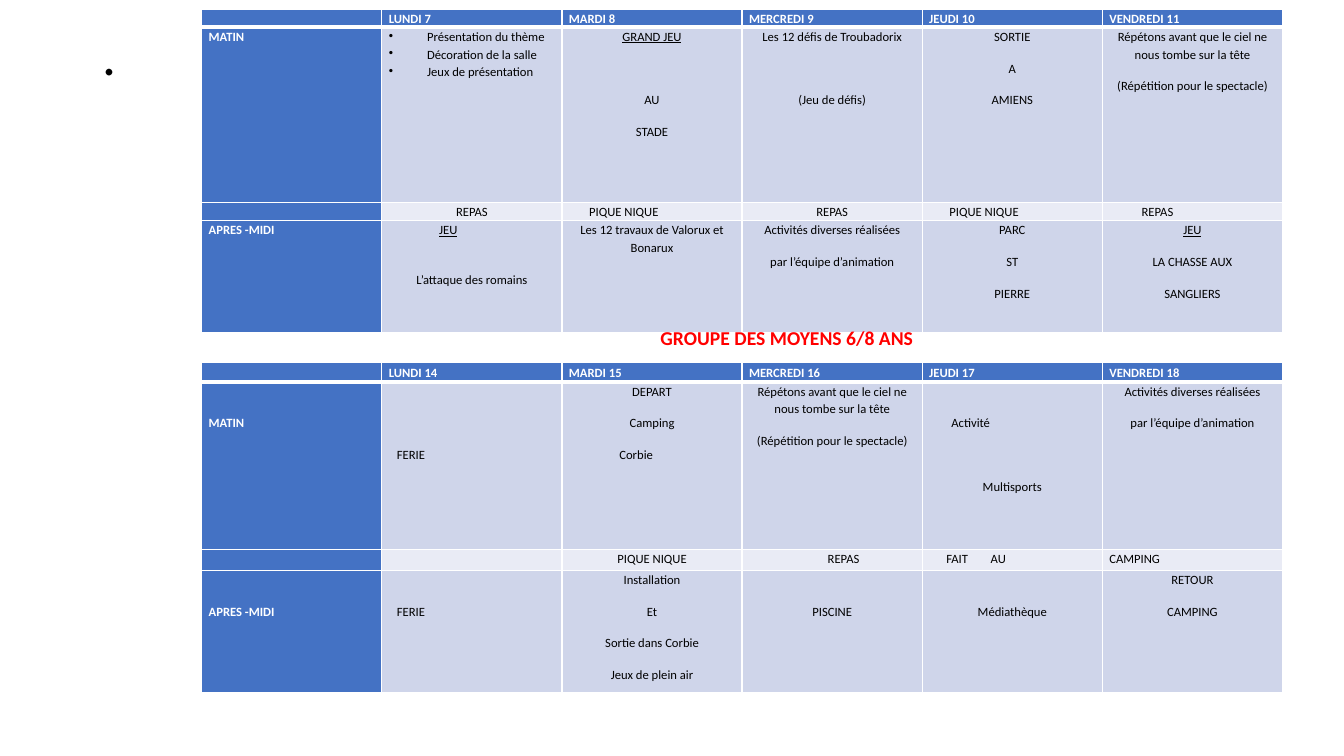
import pptx
import pptx.util
import pptx.dml.color
import pptx.enum.text
import pptx.oxml.ns
import lxml.etree

Inches = pptx.util.Inches
Pt = pptx.util.Pt
Align = pptx.enum.text.PP_ALIGN
Anchor = pptx.enum.text.MSO_ANCHOR
qn = pptx.oxml.ns.qn

theme = {
    "font": "Calibri", "white": "FFFFFF", "black": "000000", "red": "FF0000",
    "blue": "4472C4", "day": "CFD5EA", "meal": "E9EBF5",
    "cell": 9, "group": 14, "mark": 39.6, "after": 10, "skipped_line": 22.6,
}
left = {"align": Align.LEFT}
underlined = {"underline": True}
bullet = {"align": Align.LEFT, "indent": 0.38, "bullet": "•", "after": 0}


def write(frame, text, size=theme["cell"], color=theme["black"], bold=False,
          underline=False, align=Align.CENTER, spacing=1.15, after=theme["after"],
          skip=0, indent=0, bullet=None, tabs=()):
    para = frame.paragraphs[0]
    if para.runs:
        para = frame.add_paragraph()
        para.space_before = Pt(skip * theme["skipped_line"])
    para.alignment = align
    para.line_spacing = spacing
    para.space_after = Pt(after)
    properties = para._p.get_or_add_pPr()
    if indent:
        properties.set("marL", str(Inches(indent)))
    if bullet:
        properties.set("indent", str(-Inches(indent)))
        lxml.etree.SubElement(properties, qn("a:buChar"), char=bullet)
    if tabs:
        stops = lxml.etree.SubElement(properties, qn("a:tabLst"))
        for stop in tabs:
            lxml.etree.SubElement(stops, qn("a:tab"), pos=str(Inches(stop)), algn="l")
    if not text:
        lxml.etree.SubElement(para._p, qn("a:endParaRPr"), sz=str(size * 100))
        return
    span = para.add_run()
    span.text = text
    span.font.name = theme["font"]
    span.font.size = Pt(size)
    span.font.bold = bold
    span.font.underline = underline
    span.font.color.rgb = pptx.dml.color.RGBColor.from_string(color)


rehearsal = ["Répétons avant que le ciel ne nous tombe sur la tête",
             "(Répétition pour le spectacle)"]
varied = ["Activités diverses réalisées", "par l’équipe d’animation"]
picnic = [("PIQUE NIQUE", {**left, "indent": 0.2})]

weeks = [
    {
        "top": 0.09, "heights": [0.18, 1.74, 0.18, 1.11],
        "rows": [
            [[""], ["LUNDI 7"], ["MARDI 8"], ["MERCREDI 9"], ["JEUDI 10"], ["VENDREDI 11"]],
            [["MATIN"],
             [("Présentation du thème", bullet), ("Décoration de la salle", bullet),
              ("Jeux de présentation", bullet)],
             [("GRAND JEU", underlined), ("AU", {"skip": 1}), "STADE"],
             ["Les 12 défis de Troubadorix", ("(Jeu de défis)", {"skip": 1})],
             ["SORTIE", "A", "AMIENS"],
             rehearsal],
            [[""], ["REPAS"], picnic, ["REPAS"], picnic,
             [("REPAS", {**left, "indent": 0.32})]],
            [["APRES -MIDI"],
             [("JEU", {**left, **underlined, "indent": 0.5, "after": 0}),
              ("L’attaque des romains", {"skip": 1})],
             ["Les 12 travaux de Valorux et Bonarux"],
             varied,
             ["PARC", "ST", "PIERRE"],
             [("JEU", underlined), "LA CHASSE AUX", "SANGLIERS"]],
        ],
    },
    {
        "top": 3.6, "heights": [0.19, 1.66, 0.21, 1.21],
        "rows": [
            [[""], ["LUNDI 14"], ["MARDI 15"], ["MERCREDI 16"], ["JEUDI 17"], ["VENDREDI 18"]],
            [[("MATIN", {"skip": 1})],
             [("FERIE", {**left, "skip": 2, "indent": 0.08})],
             ["DEPART", "Camping", ("Corbie", {**left, "indent": 0.5})],
             rehearsal,
             [("Activité", {**left, "skip": 1, "indent": 0.22}),
              ("Multisports", {"skip": 1})],
             varied],
            [[""], [""], ["PIQUE NIQUE"],
             [("REPAS", {**left, "indent": 0.78})],
             [("\tFAIT\tAU", {**left, "tabs": (0.17, 0.61)})],
             [("CAMPING", left)]],
            [[("APRES -MIDI", {"skip": 1})],
             [("FERIE", {**left, "skip": 1, "indent": 0.08})],
             ["Installation", "Et", "Sortie dans Corbie", "Jeux de plein air"],
             [("PISCINE", {"skip": 1})],
             [("Médiathèque", {"skip": 1})],
             ["RETOUR", "CAMPING"]],
        ],
    },
]

deck = pptx.Presentation()
deck.slide_width = Inches(13.33)
deck.slide_height = Inches(7.5)
page = deck.slides.add_slide(deck.slide_layouts[6])

for week in weeks:
    table = page.shapes.add_table(4, 6, Inches(2), Inches(week["top"]), Inches(10.72),
                                  Inches(sum(week["heights"]))).table
    table.first_row = False
    table.horz_banding = False
    for column in table.columns:
        column.width = Inches(10.72 / 6)
    for row_index, row in enumerate(week["rows"]):
        table.rows[row_index].height = Inches(week["heights"][row_index])
        for column_index, entries in enumerate(row):
            cell = table.cell(row_index, column_index)
            heading = row_index == 0 or column_index == 0
            cell.margin_left = cell.margin_right = Inches(0.07)
            cell.margin_top = cell.margin_bottom = 0
            for side in ("L", "R", "T", "B"):
                thick = (row_index, side) in ((0, "B"), (1, "T"))
                border = lxml.etree.SubElement(cell._tc.get_or_add_tcPr(), qn("a:ln" + side),
                                               w=str(Pt(3 if thick else 1)))
                paint = lxml.etree.SubElement(border, qn("a:solidFill"))
                lxml.etree.SubElement(paint, qn("a:srgbClr"), val=theme["white"])
            fill = "blue" if heading else "meal" if row_index == 2 else "day"
            cell.fill.solid()
            cell.fill.fore_color.rgb = pptx.dml.color.RGBColor.from_string(theme[fill])
            base = {**left, "color": theme["white"], "bold": True} if heading else {}
            for order, entry in enumerate(entries):
                text, extra = (entry, {}) if isinstance(entry, str) else entry
                if order == 0:
                    cell.margin_top = Pt(extra.get("skip", 0) * theme["skipped_line"])
                write(cell.text_frame, text, **{**base, **extra})

labels = [
    (".", (0.92, 0.4, 0.22, 0.35),
     {"size": theme["mark"], "align": Align.LEFT, "spacing": 0.9}),
    ("GROUPE DES MOYENS 6/8 ANS", (1.14, 3.1, 13.33, 0.5),
     {"size": theme["group"], "color": theme["red"], "bold": True, "spacing": 1.0}),
]
for text, place, style in labels:
    box = page.shapes.add_textbox(*map(Inches, place))
    box.text_frame.word_wrap = True
    box.text_frame.vertical_anchor = Anchor.MIDDLE
    write(box.text_frame, text, after=0, **style)

deck.save("out.pptx")
